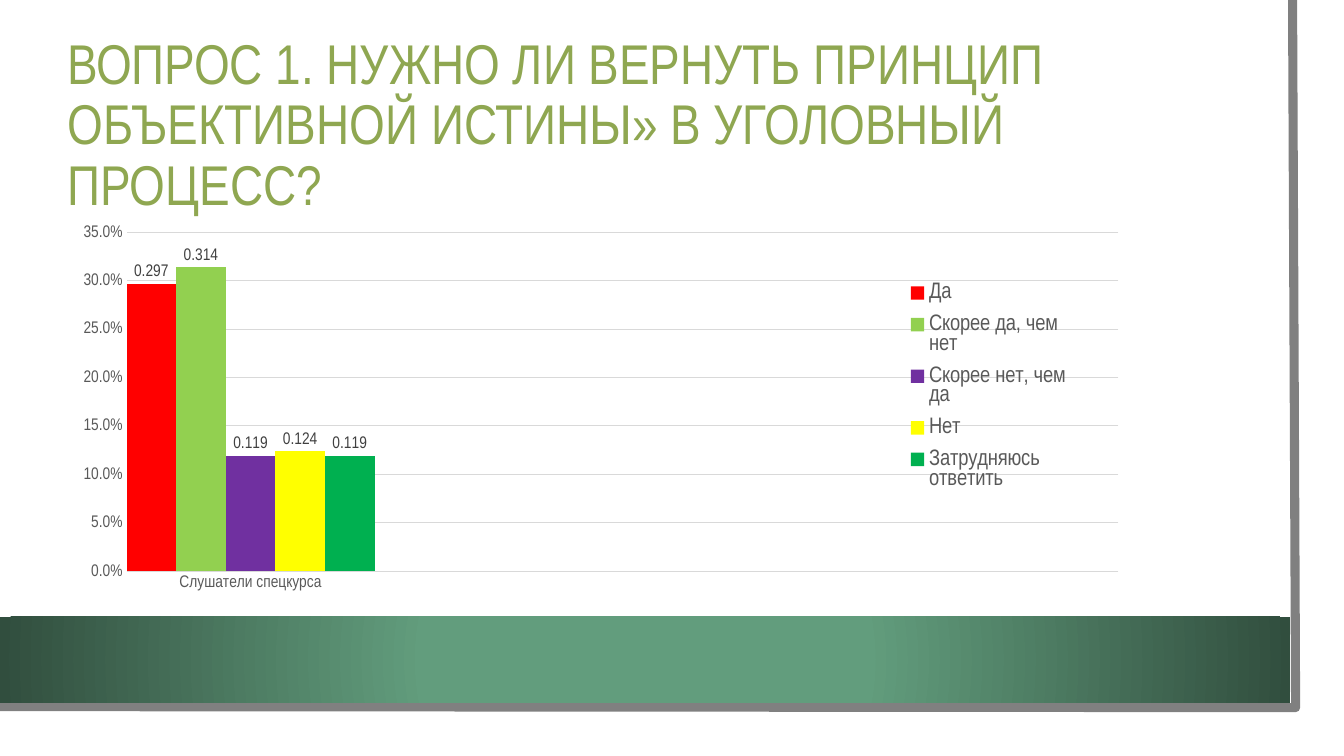
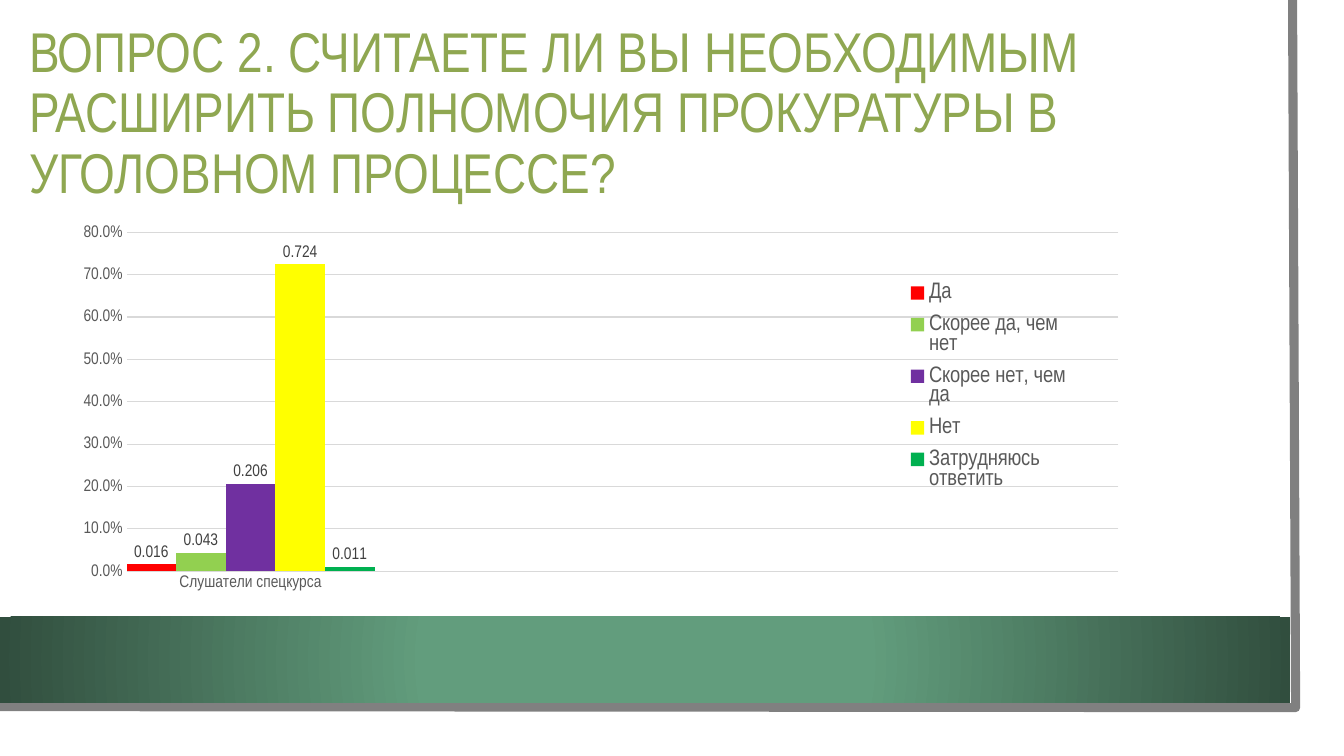
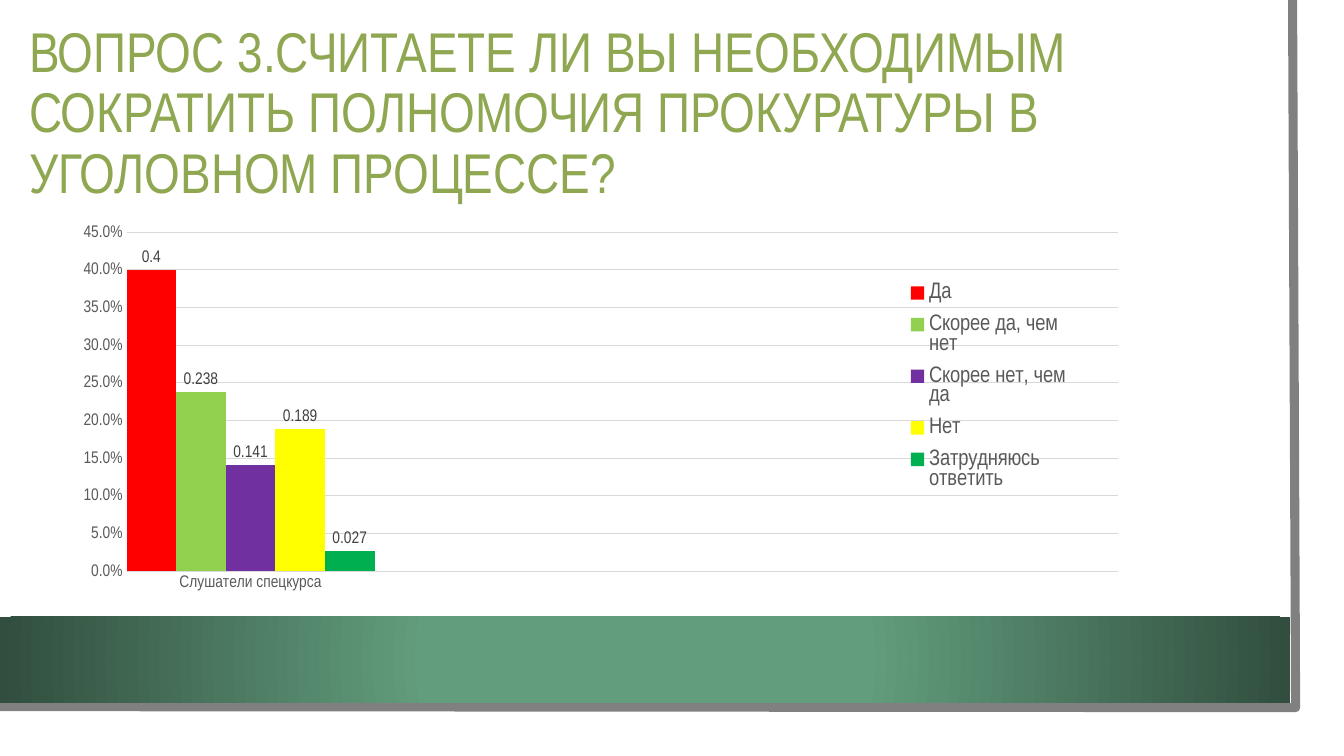
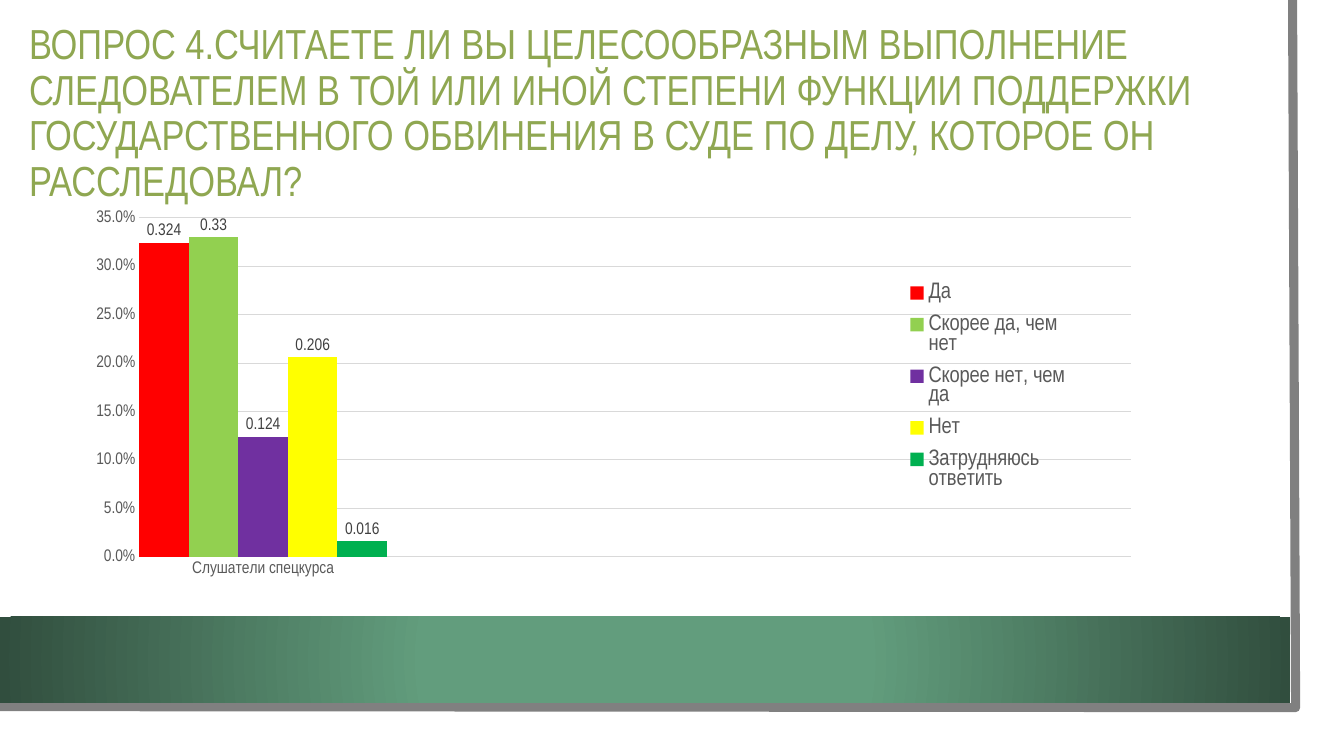
from dataclasses import dataclass

from lxml import etree
from pptx import Presentation
from pptx.chart.data import CategoryChartData
from pptx.dml.color import RGBColor
from pptx.enum.chart import XL_CHART_TYPE, XL_LABEL_POSITION, XL_LEGEND_POSITION, XL_TICK_MARK
from pptx.enum.shapes import MSO_SHAPE
from pptx.enum.text import MSO_ANCHOR
from pptx.oxml.ns import qn
from pptx.util import Inches, Pt

COLUMNS = XL_CHART_TYPE.COLUMN_CLUSTERED
OUTSIDE = XL_LABEL_POSITION.OUTSIDE_END
RIGHT = XL_LEGEND_POSITION.RIGHT
NO_TICK = XL_TICK_MARK.NONE
RECT = MSO_SHAPE.RECTANGLE
MIDDLE = MSO_ANCHOR.MIDDLE


@dataclass(frozen=True)
class Theme:
    font: str = "Arial Narrow"
    title: str = "8FA751"
    paper: str = "FFFFFF"
    edge: str = "808080"
    band_light: str = "629D7D"
    band_dark: str = "314E3E"
    axis: str = "595959"
    label: str = "404040"
    grid: str = "D9D9D9"
    axis_size: int = 12
    legend_size: int = 16


THEME = Theme()

ANSWERS = [
    ("Да", "FF0000"),
    ("Скорее да, чем нет", "92D050"),
    ("Скорее нет, чем да", "7030A0"),
    ("Нет", "FFFF00"),
    ("Затрудняюсь ответить", "00B050"),
]
CATEGORIES = ["Слушатели спецкурса", "", "", ""]

CHART_BOX = (0.72, 2.06, 10.5, 4.22)
PLOT = (0.051, 0.058, 0.937, 0.797)
LEGEND = (0.78, 0.15, 0.17, 0.54)
TITLE_BOX = (0.19, 0.21, 12.38, 1.85)

QUESTIONS = [
    {
        "title": "ВОПРОС 1. НУЖНО ЛИ ВЕРНУТЬ ПРИНЦИП ОБЪЕКТИВНОЙ ИСТИНЫ» В УГОЛОВНЫЙ ПРОЦЕСС?",
        "box": (0.57, 0.46, 12, 1.59),
        "shares": (0.297, 0.314, 0.119, 0.124, 0.119),
    },
    {
        "title": "ВОПРОС 2. СЧИТАЕТЕ ЛИ ВЫ НЕОБХОДИМЫМ РАСШИРИТЬ ПОЛНОМОЧИЯ ПРОКУРАТУРЫ В УГОЛОВНОМ ПРОЦЕССЕ?",
        "shares": (0.016, 0.043, 0.206, 0.724, 0.011),
    },
    {
        "title": "ВОПРОС 3.СЧИТАЕТЕ ЛИ ВЫ НЕОБХОДИМЫМ СОКРАТИТЬ ПОЛНОМОЧИЯ ПРОКУРАТУРЫ В УГОЛОВНОМ ПРОЦЕССЕ?",
        "shares": (0.4, 0.238, 0.141, 0.189, 0.027),
    },
    {
        "title": "ВОПРОС 4.СЧИТАЕТЕ ЛИ ВЫ ЦЕЛЕСООБРАЗНЫМ ВЫПОЛНЕНИЕ СЛЕДОВАТЕЛЕМ В ТОЙ ИЛИ ИНОЙ СТЕПЕНИ "
                 "ФУНКЦИИ ПОДДЕРЖКИ ГОСУДАРСТВЕННОГО ОБВИНЕНИЯ В СУДЕ ПО ДЕЛУ, КОТОРОЕ ОН РАССЛЕДОВАЛ?",
        "box": (0.19, 0.21, 12.71, 1.85),
        "size": 30,
        "shares": (0.324, 0.33, 0.124, 0.206, 0.016),
        "plot": (0.064, 0.024, 0.937, 0.797),
    },
]


def rgb(code):
    return RGBColor.from_string(code)


def inches(box):
    return [Inches(v) for v in box]


def set_font(font, size, color):
    font.name = THEME.font
    font.size = Pt(size)
    font.color.rgb = rgb(color)


def add_rect(slide, box):
    sp = slide.shapes.add_shape(RECT, *inches(box))
    sp.shadow.inherit = False
    sp.line.fill.background()
    return sp


def add_frame(slide, layout):
    paper = add_rect(slide, (0, 0, 13.1, 7.27))
    paper.fill.solid()
    paper.fill.fore_color.rgb = rgb(THEME.paper)

    fb = slide.shapes.build_freeform(Inches(12.82), 0)
    fb.add_line_segments([inches((12.85, 7.02)), inches((-0.03, 7.01))], close=False)
    edge = fb.convert_to_shape()
    edge.shadow.inherit = False
    edge.fill.background()
    edge.line.color.rgb = rgb(THEME.edge)
    edge.line.width = Pt(6.5)

    band = add_rect(slide, (0, 6.12, 12.8, 0.85))
    band.fill.gradient()
    stops = [(0.34, THEME.band_light), (1, THEME.band_dark)]
    for stop, (position, color) in zip(band.fill.gradient_stops, stops):
        stop.position = position
        stop.color.rgb = rgb(color)
    grad = band.element.spPr.find(qn("a:gradFill"))
    grad.remove(grad.find(qn("a:lin")))
    circle = etree.SubElement(grad, qn("a:path"), path="circle")
    etree.SubElement(circle, qn("a:fillToRect"), {side: "50000" for side in "ltrb"})

    for sp in (paper, edge, band):
        layout.shapes.element.append(sp.element)


def add_title(slide, text, box, size):
    tf = slide.shapes.add_textbox(*inches(box)).text_frame
    tf.word_wrap = True
    tf.vertical_anchor = MIDDLE
    p = tf.paragraphs[0]
    p.line_spacing = 0.9
    r = p.add_run()
    r.text = text
    set_font(r.font, size, THEME.title)


def set_layout(parent, index, box, inner=False):
    for old in parent.findall(qn("c:layout")):
        parent.remove(old)
    layout = etree.Element(qn("c:layout"))
    manual = etree.SubElement(layout, qn("c:manualLayout"))
    values = [("layoutTarget", "inner")] if inner else []
    values += [("xMode", "edge"), ("yMode", "edge")]
    values += zip("xywh", map(str, box))
    for tag, value in values:
        etree.SubElement(manual, qn("c:" + tag), val=value)
    parent.insert(index, layout)


def add_answers(slide, shares, plot_box):
    data = CategoryChartData()
    data.categories = CATEGORIES
    blanks = [None] * (len(CATEGORIES) - 1)
    for (name, _), share in zip(ANSWERS, shares):
        data.add_series(name, [share] + blanks)
    chart = slide.shapes.add_chart(COLUMNS, *inches(CHART_BOX), data).chart
    chart.has_title = False
    set_font(chart.font, 10, "000000")

    plot = chart.plots[0]
    plot.gap_width = 0
    plot.overlap = 0
    plot.vary_by_categories = False
    for series, (_, color) in zip(plot.series, ANSWERS):
        series.format.fill.solid()
        series.format.fill.fore_color.rgb = rgb(color)
        labels = series.data_labels
        labels.show_value = True
        labels.position = OUTSIDE
        labels.number_format = "General"
        labels.number_format_is_linked = False
        set_font(labels.font, THEME.axis_size, THEME.label)

    cat, val = chart.category_axis, chart.value_axis
    for axis in (cat, val):
        axis.major_tick_mark = axis.minor_tick_mark = NO_TICK
        set_font(axis.tick_labels.font, THEME.axis_size, THEME.axis)
    val.has_major_gridlines = True
    for line, width in ((cat.format.line, 1), (val.major_gridlines.format.line, 0.75)):
        line.color.rgb = rgb(THEME.grid)
        line.width = Pt(width)
    val.format.line.fill.background()
    val.tick_labels.number_format = "0.0%"
    val.tick_labels.number_format_is_linked = False

    chart.has_legend = True
    legend = chart.legend
    legend.position = RIGHT
    legend.include_in_layout = False
    set_font(legend.font, THEME.legend_size, THEME.axis)

    area = chart.element.find(".//" + qn("c:plotArea"))
    set_layout(area, 0, plot_box, inner=True)
    set_layout(chart.element.find(".//" + qn("c:legend")), 1, LEGEND)


def main():
    prs = Presentation()
    prs.slide_width, prs.slide_height = inches((13.33, 7.5))
    blank = prs.slide_layouts[6]
    for number, question in enumerate(QUESTIONS):
        slide = prs.slides.add_slide(blank)
        if number == 0:
            add_frame(slide, blank)
        add_title(slide, question["title"], question.get("box", TITLE_BOX), question.get("size", 40))
        add_answers(slide, question["shares"], question.get("plot", PLOT))
    prs.save("out.pptx")


if __name__ == "__main__":
    main()
